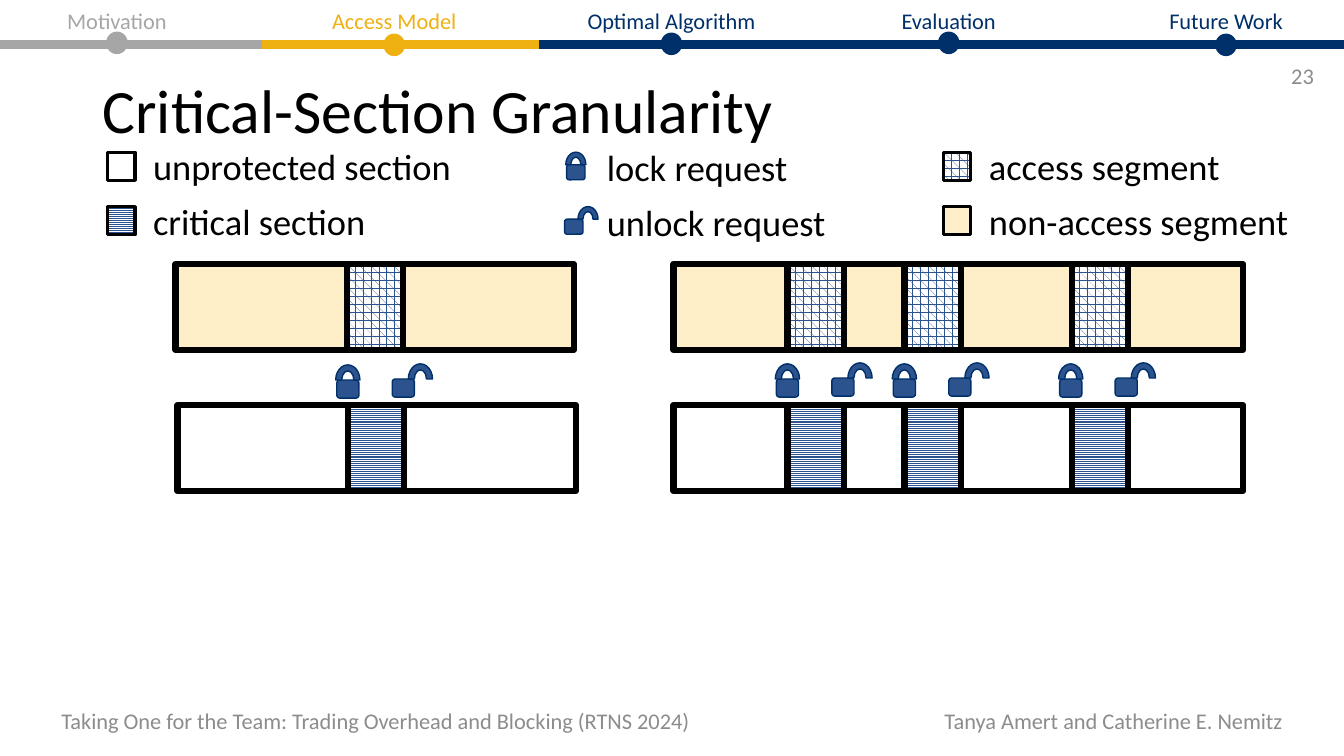
from lxml.etree import SubElement
from pptx import Presentation
from pptx.dml.color import RGBColor
from pptx.enum.dml import MSO_PATTERN
from pptx.enum.shapes import MSO_CONNECTOR, MSO_SHAPE
from pptx.enum.text import MSO_ANCHOR, PP_ALIGN
from pptx.oxml.ns import qn
from pptx.util import Inches, Pt

BLACK = RGBColor(0x00, 0x00, 0x00)
WHITE = RGBColor(0xFF, 0xFF, 0xFF)
NAVY = RGBColor(0x00, 0x30, 0x69)
BLUE = RGBColor(0x2D, 0x53, 0x8F)
GOLD = RGBColor(0xEE, 0xB1, 0x11)
CREAM = RGBColor(0xFF, 0xEF, 0xC8)
GREY = RGBColor(0x8C, 0x8C, 0x8C)
LIGHT_GREY = RGBColor(0xA6, 0xA6, 0xA6)
ACCESS, CRITICAL = MSO_PATTERN.PLAID, MSO_PATTERN.LIGHT_HORIZONTAL

TITLE = "Critical-Section Granularity"
PAGE_NUMBER = "23"
TALK = "Taking One for the Team: Trading Overhead and Blocking (RTNS 2024)"
AUTHORS = "Tanya Amert and Catherine E. Nemitz"

# label, label width, dot top, colour
NAV = [
    ("Motivation", 1.48, 0.32, LIGHT_GREY),
    ("Access Model", 2.09, 0.34, GOLD),
    ("Optimal Algorithm", 2.13, 0.33, NAVY),
    ("Evaluation", 1.86, 0.32, NAVY),
    ("Future Work", 1.48, 0.34, NAVY),
]
NAV_FIRST, NAV_STEP = 1.16, 2.75
NAV_LINES = [(13.33, NAVY), (5.35, GOLD), (2.6, LIGHT_GREY)]

# label, column left, row, label width, swatch fill
LEGEND_SWATCHES = [
    ("unprotected section", 1.07, 0, 3.72, None),
    ("critical section", 1.07, 1, 2.89, CRITICAL),
    ("access segment", 9.36, 0, 2.94, ACCESS),
    ("non-access segment", 9.36, 1, 3.48, CREAM),
]
# label, padlock left, row, label width, open
LEGEND_LOCKS = [
    ("lock request", 5.62, 0, 2.59, False),
    ("unlock request", 5.6, 1, 2.71, True),
]
LEGEND_TOP, LEGEND_STEP = 1.51, 0.54

# left, top, width, bar fill, segment fill, segment offsets
RIGHT_OFFSETS = (1.13, 2.29, 3.95)
TIMELINES = [
    (6.68, 2.62, 5.65, CREAM, ACCESS, RIGHT_OFFSETS),
    (1.74, 2.62, 3.95, CREAM, ACCESS, (1.7,)),
    (1.76, 4.02, 3.95, None, CRITICAL, (1.69,)),
    (6.68, 4.02, 5.65, None, CRITICAL, RIGHT_OFFSETS),
]
BAR_HEIGHT, SEGMENT_WIDTH = 0.85, 0.56
# left edge of a segment, top of its padlocks
LOCKED_SEGMENTS = [(3.45, 3.62), (7.81, 3.61), (8.97, 3.61), (10.62, 3.61)]


def add_text(shapes, text, x, y, w, h, size, color=BLACK,
             align=PP_ALIGN.LEFT, anchor=MSO_ANCHOR.MIDDLE):
    tf = shapes.add_textbox(Inches(x), Inches(y), Inches(w), Inches(h)).text_frame
    tf.word_wrap = True
    tf.vertical_anchor = anchor
    p = tf.paragraphs[0]
    p.text = text
    p.alignment = align
    p.font.name = "Calibri"
    p.font.size = Pt(size)
    p.font.color.rgb = color
    return p


def add_box(shapes, kind, x, y, w, h, fill, line, width):
    """Add a preset shape; fill is a colour, a pattern or None."""
    sp = shapes.add_shape(kind, Inches(x), Inches(y), Inches(w), Inches(h))
    sp.shadow.inherit = False
    if fill is None:
        sp.fill.background()
    elif isinstance(fill, RGBColor):
        sp.fill.solid()
        sp.fill.fore_color.rgb = fill
    else:
        sp.fill.patterned()
        sp.fill.pattern = fill
        sp.fill.fore_color.rgb = BLUE
        sp.fill.back_color.rgb = WHITE
    sp.line.color.rgb = line
    sp.line.width = Pt(width)


def add_padlock(shapes, x, y, is_open, scale=1.0):
    """Add a padlock whose body starts at x and whose shackle tops out at y."""
    lock = shapes.add_group_shape().shapes
    shift = 0.16 if is_open else -0.01
    parts = [
        (MSO_SHAPE.ROUNDED_RECTANGLE, 0, 0.15, 0.22, 0.18),
        (MSO_SHAPE.BLOCK_ARC, shift, 0, 0.24, 0.3),
    ]
    for kind, dx, dy, w, h in parts:
        add_box(lock, kind, x + dx * scale, y + dy * scale,
                w * scale, h * scale, BLUE, NAVY, 1)


def add_navigation(shapes):
    for end, color in NAV_LINES:
        line = shapes.add_connector(MSO_CONNECTOR.STRAIGHT, Inches(0), Inches(0.44),
                                    Inches(end), Inches(0.44))
        line.line.color.rgb = color
        line.line.width = Pt(6)
        SubElement(line._element.spPr, qn("a:effectLst"))
    for i, (label, width, dot_top, color) in enumerate(NAV):
        center = NAV_FIRST + i * NAV_STEP
        add_text(shapes, label, center - width / 2, 0.02, width, 0.37, 16, color,
                 PP_ALIGN.CENTER, MSO_ANCHOR.TOP)
        add_box(shapes, MSO_SHAPE.OVAL, center - 0.1, dot_top, 0.2, 0.21,
                color, color, 1)


def add_legend(shapes):
    for label, x, row, width, fill in LEGEND_SWATCHES:
        y = LEGEND_TOP + row * LEGEND_STEP
        add_box(shapes, MSO_SHAPE.RECTANGLE, x, y, 0.27, 0.28, fill, BLACK, 2.25)
        add_text(shapes, label, x + 0.35, y - 0.13, width, 0.54, 26)
    for label, x, row, width, is_open in LEGEND_LOCKS:
        y = LEGEND_TOP + row * LEGEND_STEP
        add_padlock(shapes, x, y, is_open, 0.83)
        add_text(shapes, label, 5.92, y - 0.12, width, 0.54, 26)


def add_timelines(shapes):
    for x, y, width, bar_fill, segment_fill, offsets in TIMELINES:
        spans = [(0, width, bar_fill)]
        spans += [(offset, SEGMENT_WIDTH, segment_fill) for offset in offsets]
        for dx, w, fill in spans:
            add_box(shapes, MSO_SHAPE.RECTANGLE, x + dx, y, w, BAR_HEIGHT,
                    fill, BLACK, 4.5)
    for x, y in LOCKED_SEGMENTS:
        add_padlock(shapes, x - 0.11, y, False)
        add_padlock(shapes, x + 0.44, y - 0.01, True)


def main():
    prs = Presentation()
    prs.slide_width, prs.slide_height = Inches(13.33), Inches(7.5)
    shapes = prs.slides.add_slide(prs.slide_layouts[6]).shapes
    add_text(shapes, AUTHORS, 9.03, 6.95, 3.79, 0.4, 16, GREY, PP_ALIGN.RIGHT)
    add_text(shapes, TALK, 0.51, 6.95, 6.6, 0.4, 16, GREY)
    add_text(shapes, TITLE, 0.92, 0.4, 11.5, 1.45, 44).line_spacing = 0.9
    add_text(shapes, PAGE_NUMBER, 10.13, 0.55, 3, 0.4, 16, GREY, PP_ALIGN.RIGHT)
    add_legend(shapes)
    add_timelines(shapes)
    add_navigation(shapes)
    prs.save("out.pptx")


if __name__ == "__main__":
    main()
